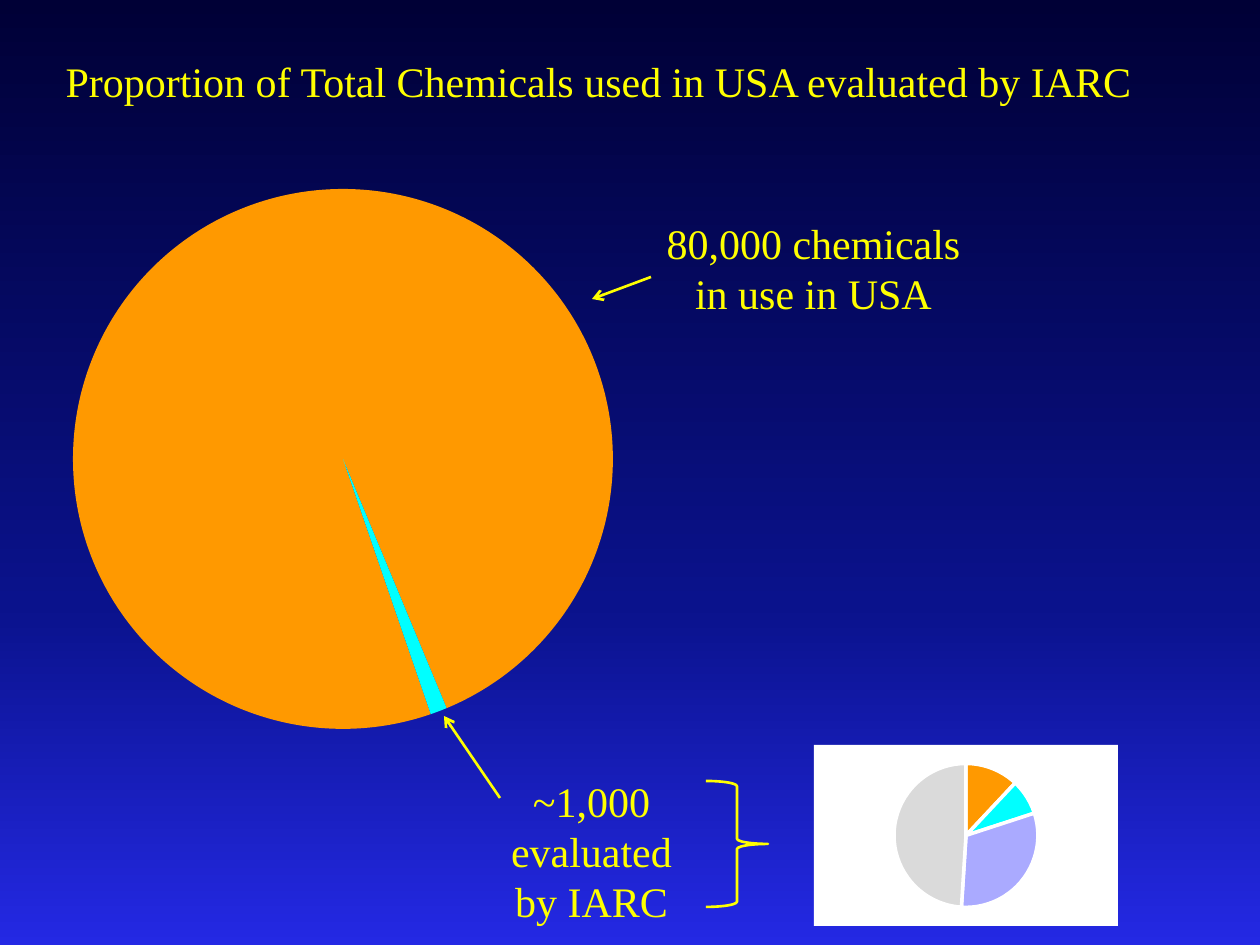
from dataclasses import dataclass

from lxml.etree import SubElement
from pptx import Presentation
from pptx.chart.data import CategoryChartData
from pptx.dml.color import RGBColor
from pptx.enum.chart import XL_CHART_TYPE
from pptx.enum.shapes import MSO_CONNECTOR, MSO_SHAPE
from pptx.enum.text import MSO_ANCHOR, MSO_AUTO_SIZE, PP_ALIGN
from pptx.oxml import parse_xml
from pptx.oxml.ns import nsdecls, qn
from pptx.util import Emu, Pt

PX = 914400 / 126


def px(n):
    return Emu(round(n * PX))


def rgb(color):
    return RGBColor.from_string(color)


@dataclass(frozen=True)
class Theme:
    font: str = "Times New Roman"
    ink: str = "FFFF00"
    paper: str = "FFFFFF"
    slices: tuple = ("FF9900", "00FFFF", "AAAAFF", "DADADA")
    sky: tuple = ((0, "000036"), (64, "0A128C"), (100, "2429E4"))
    text_size: int = 24
    chart_size: int = 10
    line_width: float = 1.5
    slice_gap: int = 2


class Deck:
    def __init__(self, theme):
        self.theme = theme
        self.prs = Presentation()
        self.prs.slide_width, self.prs.slide_height = px(1260), px(945)
        self.s = None

    def slide(self):
        self.s = self.prs.slides.add_slide(self.prs.slide_layouts[5])
        fill = self.s.background.fill
        fill.gradient()
        fill.gradient_angle = 270
        stops = "".join(
            f'<a:gs pos="{pos * 1000}"><a:srgbClr val="{color}"/></a:gs>'
            for pos, color in self.theme.sky)
        bg = self.s.background._cSld.bg
        old = bg.find(".//" + qn("a:gsLst"))
        new = parse_xml(f'<a:gsLst {nsdecls("a")}>{stops}</a:gsLst>')
        old.getparent().replace(old, new)

    def set_text(self, sp, text, align):
        tf = sp.text_frame
        tf.word_wrap = True
        tf.auto_size = MSO_AUTO_SIZE.NONE
        tf.vertical_anchor = MSO_ANCHOR.TOP
        p = tf.paragraphs[0]
        p.alignment = align
        r = p.add_run()
        r.text = text
        r.font.name = self.theme.font
        r.font.size = Pt(self.theme.text_size)
        r.font.color.rgb = rgb(self.theme.ink)

    def title(self, text, x, y, w, h):
        sp = self.s.shapes.title
        sp.left, sp.top, sp.width, sp.height = map(px, (x, y, w, h))
        self.set_text(sp, text, PP_ALIGN.LEFT)

    def label(self, text, x, y, w, h):
        sp = self.s.shapes.add_textbox(*map(px, (x, y, w, h)))
        self.set_text(sp, text, PP_ALIGN.CENTER)

    def stroke(self, line):
        line.color.rgb = rgb(self.theme.ink)
        line.width = Pt(self.theme.line_width)

    def arrow(self, x1, y1, x2, y2):
        c = self.s.shapes.add_connector(
            MSO_CONNECTOR.STRAIGHT, *map(px, (x1, y1, x2, y2)))
        self.stroke(c.line)
        SubElement(c.line._get_or_add_ln(), qn("a:tailEnd"), type="arrow")
        SubElement(c._element.spPr, qn("a:effectLst"))

    def brace(self, x, y, w, h):
        sp = self.s.shapes.add_shape(
            MSO_SHAPE.RIGHT_BRACE, *map(px, (x, y, w, h)))
        sp.shadow.inherit = False
        sp.fill.background()
        self.stroke(sp.line)

    def pie(self, values, x, y, w, h, radius, start=0, paper=None, gap=False):
        data = CategoryChartData()
        data.categories = [str(i + 1) for i in range(len(values))]
        data.add_series("Series 1", values)
        chart = self.s.shapes.add_chart(
            XL_CHART_TYPE.PIE, *map(px, (x, y, w, h)), data).chart
        chart.has_legend = chart.has_title = False
        chart.font.name = self.theme.font
        chart.font.size = Pt(self.theme.chart_size)
        chart.font.color.rgb = rgb(self.theme.paper)
        plot = chart.plots[0]
        plot.vary_by_categories = True
        for i, color in enumerate(self.theme.slices[:len(values)]):
            fmt = plot.series[0].points[i].format
            fmt.fill.solid()
            fmt.fill.fore_color.rgb = rgb(color)
            if gap:
                fmt.line.color.rgb = rgb(self.theme.paper)
                fmt.line.width = Pt(self.theme.slice_gap)
            else:
                fmt.line.fill.background()
        self.fit_pie(chart, w, h, radius, start)
        self.chart_area(chart, paper)

    def fit_pie(self, chart, w, h, radius, start):
        area = chart._chartSpace.chart.plotArea
        pie = area.find(qn("c:pieChart"))
        angle = pie.find(qn("c:firstSliceAng"))
        if angle is None:
            angle = SubElement(pie, qn("c:firstSliceAng"))
        angle.set("val", str(start))
        for old in area.findall(qn("c:layout")):
            area.remove(old)
        dw, dh = 2 * radius / w, 2 * radius / h
        sizes = (("x", (1 - dw) / 2), ("y", (1 - dh) / 2), ("w", dw), ("h", dh))
        modes = '<c:xMode val="edge"/><c:yMode val="edge"/>'
        places = "".join(f'<c:{k} val="{v:.4f}"/>' for k, v in sizes)
        area.insert(0, parse_xml(
            f'<c:layout {nsdecls("c")}><c:manualLayout>'
            f'<c:layoutTarget val="inner"/>{modes}{places}'
            f'</c:manualLayout></c:layout>'))

    def chart_area(self, chart, paper):
        fill = (f'<a:solidFill><a:srgbClr val="{paper}"/></a:solidFill>'
                if paper else "<a:noFill/>")
        chart._chartSpace.chart.addnext(parse_xml(
            f'<c:spPr {nsdecls("c", "a")}>{fill}'
            f'<a:ln><a:noFill/></a:ln></c:spPr>'))


def main():
    theme = Theme()
    d = Deck(theme)
    d.slide()
    d.title("Proportion of Total Chemicals used in USA evaluated by IARC",
            53, 49, 1113, 63)
    d.pie((99, 1), -21, 173, 728, 572, radius=270, start=161)
    d.label("80,000 chemicals in use in USA", 651, 211, 325, 115)
    d.arrow(651, 277, 592, 299)
    d.label("~1,000 evaluated by IARC", 485, 769, 213, 165)
    d.arrow(500, 798, 444, 716)
    d.brace(706, 781, 62, 126)
    d.pie((12, 8, 31, 49), 814, 745, 304, 181, radius=72,
          paper=theme.paper, gap=True)
    d.prs.save("out.pptx")


if __name__ == "__main__":
    main()
